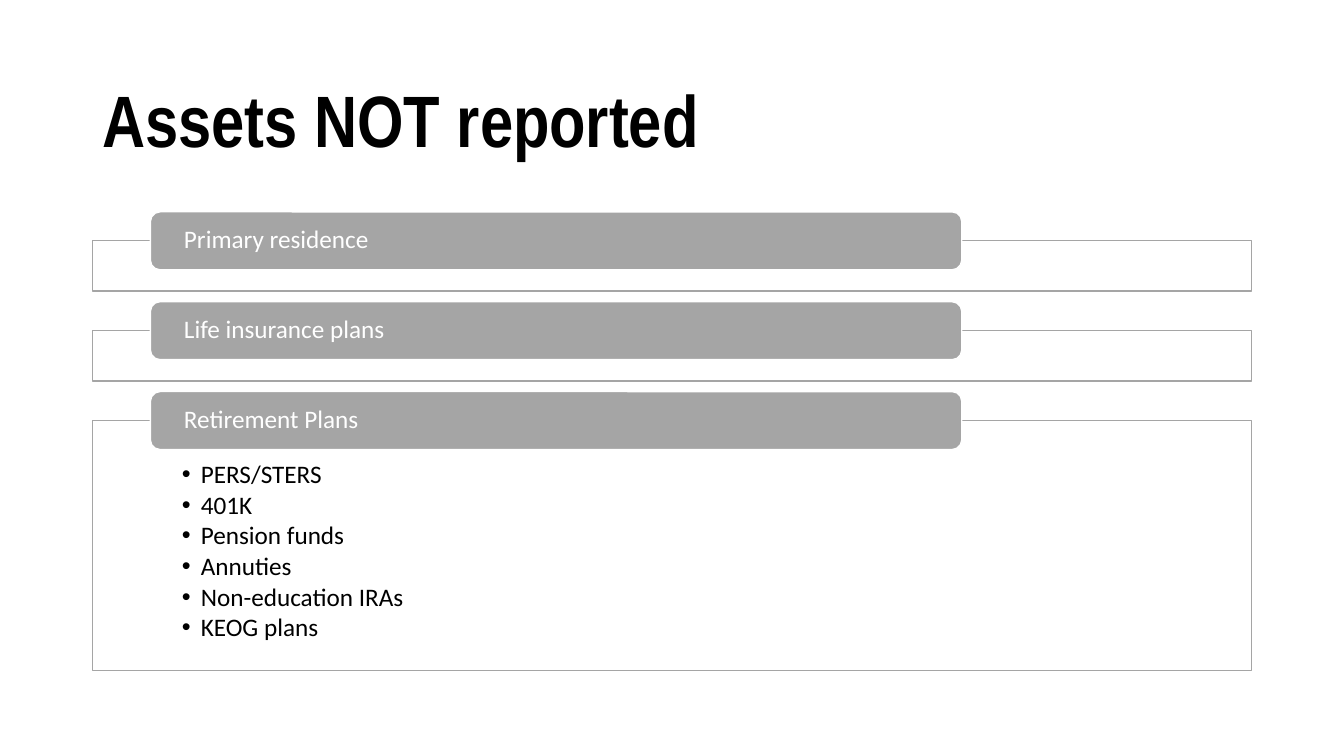
"""Build a slide that lists the assets that are not reported."""
from pptx import Presentation
from pptx.dml.color import RGBColor
from pptx.enum.shapes import MSO_SHAPE as Shape
from pptx.enum.text import MSO_ANCHOR as Anchor, PP_ALIGN as Align
from pptx.oxml.ns import qn
from pptx.util import Pt
from lxml.etree import SubElement

TITLE = "Assets NOT reported"
SECTIONS = [
    ("Primary residence", []),
    ("Life insurance plans", []),
    ("Retirement Plans", ["PERS/STERS", "401K", "Pension funds", "Annuties",
                          "Non-education IRAs", "KEOG plans"]),
]

BLACK, WHITE, GRAY = "000000", "FFFFFF", "A5A5A5"
TITLE_FONT = {"name": "Arial Narrow", "size": Pt(52), "bold": True}
BODY_FONT = {"name": "Calibri", "size": Pt(18), "bold": False}

LEFT, WIDTH = 66, 828
FIRST_TOP, GAP = 172, 28.2
EMPTY_HEIGHT, LIST_HEIGHT = 36, 178.6
TAB_LEFT, TAB_WIDTH, TAB_HEIGHT, TAB_RISE = 107.4, 579.6, 41.4, 20.7
BULLET_INDENT, BULLET_GAP = 13.5, 2.4


def color(value):
    return RGBColor.from_string(value)


def set_all(target, values):
    for name, value in values.items():
        setattr(target, name, value)


def write(shape, lines, font, ink, anchor, insets, gap=0):
    frame = shape.text_frame
    sides = ("margin_left", "margin_top", "margin_right", "margin_bottom")
    set_all(frame, dict(zip(sides, map(Pt, insets))))
    set_all(frame, {"word_wrap": True, "vertical_anchor": anchor})
    for index, line in enumerate(lines):
        para = frame.add_paragraph() if index else frame.paragraphs[0]
        set_all(para, {"alignment": Align.LEFT, "line_spacing": 0.9, "space_after": Pt(gap)})
        span = para.add_run()
        span.text = line
        set_all(span.font, font)
        span.font.color.rgb = color(ink)


def add_box(page, kind, bounds, fill, line):
    box = page.shapes.add_shape(kind, *map(Pt, bounds))
    box.shadow.inherit = False
    box.fill.solid()
    box.fill.fore_color.rgb = color(fill)
    box.line.color.rgb = color(line)
    box.line.width = Pt(1)
    return box


def add_bullets(box):
    for para in box.text_frame.paragraphs:
        props = para._p.get_or_add_pPr()
        props.set("marL", str(Pt(BULLET_INDENT)))
        props.set("indent", str(-Pt(BULLET_INDENT)))
        SubElement(props, qn("a:buFont"), typeface="Arial")
        SubElement(props, qn("a:buChar"), char="•")


def add_section(page, top, height, heading, items):
    frame = add_box(page, Shape.RECTANGLE, (LEFT, top, WIDTH, height), WHITE, GRAY)
    tint = frame.fill._xPr.find(qn("a:solidFill"))[0]
    SubElement(tint, qn("a:alpha"), val="90000")
    if items:
        write(frame, items, BODY_FONT, BLACK, Anchor.TOP, (64, 29.5, 64, 10), BULLET_GAP)
        add_bullets(frame)
    tab = add_box(page, Shape.ROUNDED_RECTANGLE,
                  (TAB_LEFT, top - TAB_RISE, TAB_WIDTH, TAB_HEIGHT), GRAY, WHITE)
    write(tab, [heading], BODY_FONT, WHITE, Anchor.MIDDLE, (22, 0, 22, 0))


def main():
    deck = Presentation()
    set_all(deck, {"slide_width": Pt(960), "slide_height": Pt(540)})
    page = deck.slides.add_slide(deck.slide_layouts[6])
    title = page.shapes.add_textbox(*map(Pt, (LEFT, 44, WIDTH, 89)))
    write(title, [TITLE], TITLE_FONT, BLACK, Anchor.MIDDLE, (7.2, 3.6, 7.2, 3.6))
    top = FIRST_TOP
    for heading, items in SECTIONS:
        height = LIST_HEIGHT if items else EMPTY_HEIGHT
        add_section(page, top, height, heading, items)
        top += height + GAP
    deck.save("out.pptx")


if __name__ == "__main__":
    main()
